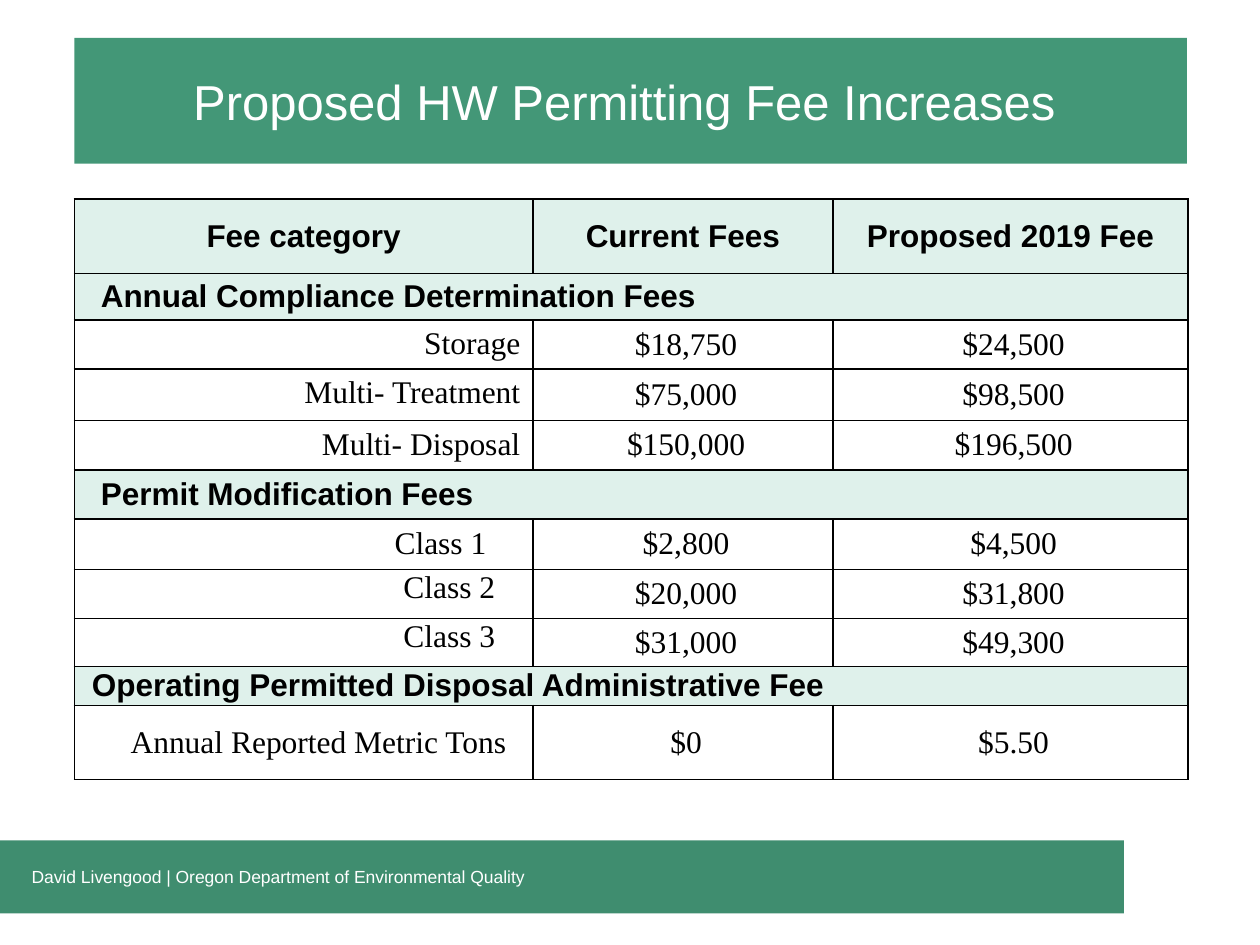
from lxml import etree
from pptx import Presentation
from pptx.dml.color import RGBColor
from pptx.enum.shapes import MSO_SHAPE
from pptx.enum.text import MSO_ANCHOR as Anchor, PP_ALIGN as Align
from pptx.oxml.ns import qn
from pptx.util import Inches, Pt

WHITE = RGBColor(0xFF, 0xFF, 0xFF)
BLACK = RGBColor(0, 0, 0)
TITLE_GREEN = RGBColor(0x43, 0x97, 0x77)
FOOTER_GREEN = RGBColor(0x3F, 0x8D, 0x6F)
PALE_GREEN = RGBColor(0xDF, 0xF1, 0xEB)

COLUMN_WIDTHS = [3.64, 2.38, 2.82]
ROW_HEIGHTS = [0.59, 0.37, 0.39, 0.41, 0.39, 0.39, 0.4, 0.39, 0.38, 0.31, 0.59]
HEADERS = ["Fee category", "Current Fees", "Proposed 2019 Fee"]
# Section title, its left inset, and its fees:
# category, current, proposed, right inset, top inset, anchor of the category
SECTIONS = [
    ("Annual Compliance Determination Fees", 0.21, [
        ("Storage", "$18,750", "$24,500", 0.1, 0.05, Anchor.TOP),
        ("Multi- Treatment", "$75,000", "$98,500", 0.1, 0.05, Anchor.TOP),
        ("Multi- Disposal", "$150,000", "$196,500", 0.1, 0.05, Anchor.TOP),
    ]),
    ("Permit Modification Fees", 0.21, [
        ("Class 1", "$2,800", "$4,500", 0.37, 0.01, Anchor.MIDDLE),
        ("Class 2", "$20,000", "$31,800", 0.3, 0.01, Anchor.TOP),
        ("Class 3", "$31,000", "$49,300", 0.3, 0.01, Anchor.TOP),
    ]),
    ("Operating Permitted Disposal Administrative Fee", 0.14, [
        ("Annual Reported Metric Tons", "$0", "$5.50", 0.21, 0.01, Anchor.MIDDLE),
    ]),
]


class FeeSlide:
    heading_font = "Arial"
    body_font = "Times New Roman"
    table_size = 18
    cell_inset = 0.01

    def __init__(self, presentation):
        self.slide = presentation.slides.add_slide(presentation.slide_layouts[6])

    def format_text(self, text_frame, size, color, align, font=heading_font, bold=False):
        paragraph = text_frame.paragraphs[0]
        paragraph.alignment = align
        for run in paragraph.runs:
            run.font.name = font
            run.font.size = Pt(size)
            run.font.bold = bold
            run.font.color.rgb = color

    def banner(self, text, box, fill, size, align, left_inset=0.1, right_inset=0.1):
        shape = self.slide.shapes.add_shape(MSO_SHAPE.RECTANGLE, *map(Inches, box))
        shape.shadow.inherit = False
        shape.fill.solid()
        shape.fill.fore_color.rgb = fill
        shape.line.fill.background()
        text_frame = shape.text_frame
        text_frame.word_wrap = True
        text_frame.vertical_anchor = Anchor.MIDDLE
        text_frame.margin_left = Inches(left_inset)
        text_frame.margin_right = Inches(right_inset)
        text_frame.text = text
        self.format_text(text_frame, size, WHITE, align)

    def border(self, cell):
        properties = cell._tc.get_or_add_tcPr()
        for index, side in enumerate(("lnL", "lnR", "lnT", "lnB")):
            line = etree.Element(qn(f"a:{side}"), w=str(Pt(1)))
            fill = etree.SubElement(line, qn("a:solidFill"))
            etree.SubElement(fill, qn("a:srgbClr"), val=str(BLACK))
            properties.insert(index, line)

    def cell(self, cell, text, align=Align.CENTER, heading=False, left=cell_inset,
             right=cell_inset, top=cell_inset, anchor=Anchor.MIDDLE):
        cell.margin_left, cell.margin_right = Inches(left), Inches(right)
        cell.margin_top, cell.margin_bottom = Inches(top), Inches(self.cell_inset)
        cell.vertical_anchor = anchor
        cell.fill.solid()
        cell.fill.fore_color.rgb = PALE_GREEN if heading else WHITE
        cell.text_frame.text = text
        font = self.heading_font if heading else self.body_font
        self.format_text(cell.text_frame, self.table_size, BLACK, align, font, heading)

    def fee_table(self, left, top):
        frame = self.slide.shapes.add_table(
            len(ROW_HEIGHTS), len(COLUMN_WIDTHS), Inches(left), Inches(top),
            Inches(sum(COLUMN_WIDTHS)), Inches(sum(ROW_HEIGHTS)))
        table = frame.table
        table.first_row = table.horz_banding = False
        for column, width in zip(table.columns, COLUMN_WIDTHS):
            column.width = Inches(width)
        for row, height in zip(table.rows, ROW_HEIGHTS):
            row.height = Inches(height)
        for cell in table.iter_cells():
            self.border(cell)

        rows = iter(table.rows)
        for cell, header in zip(next(rows).cells, HEADERS):
            self.cell(cell, header, heading=True)
        for title, inset, fees in SECTIONS:
            cells = next(rows).cells
            cells[0].merge(cells[2])
            self.cell(cells[0], title, Align.LEFT, heading=True, left=inset)
            for category, current, proposed, right, category_top, anchor in fees:
                cells = next(rows).cells
                self.cell(cells[0], category, Align.RIGHT, right=right,
                          top=category_top, anchor=anchor)
                self.cell(cells[1], current, left=0.06)
                self.cell(cells[2], proposed, left=0.06)


def main():
    presentation = Presentation()
    presentation.slide_width, presentation.slide_height = Inches(10), Inches(7.5)
    slide = FeeSlide(presentation)
    slide.banner("Proposed HW Permitting Fee Increases", (0.59, 0.3, 8.83, 1),
                 TITLE_GREEN, 28, Align.CENTER, right_inset=0.2)
    slide.banner("David Livengood | Oregon Department of Environmental Quality",
                 (0, 6.67, 8.92, 0.58), FOOTER_GREEN, 10, Align.LEFT, left_inset=0.25)
    slide.fee_table(0.59, 1.58)
    presentation.save("out.pptx")


if __name__ == "__main__":
    main()
